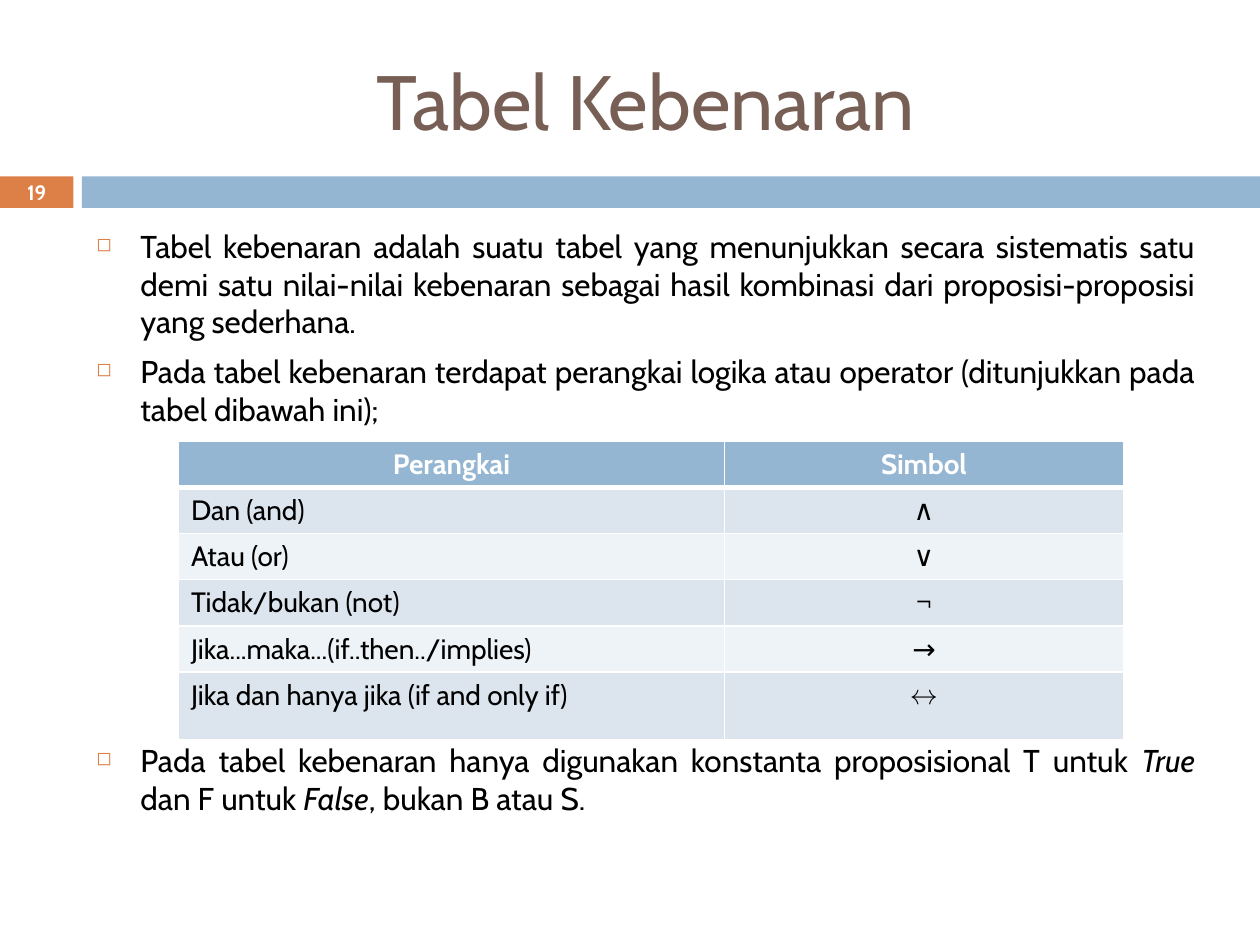
"""Builds the truth table slide with its connectives."""
from dataclasses import dataclass

from lxml.etree import SubElement
from pptx import Presentation
from pptx.dml.color import RGBColor
from pptx.enum.shapes import MSO_SHAPE as Preset
from pptx.enum.text import MSO_ANCHOR as Anchor, PP_ALIGN as Align
from pptx.oxml.ns import qn
from pptx.util import Inches, Pt


@dataclass(frozen=True)
class Theme:
    font: str = "Cabin"
    title: str = "775F55"
    ink: str = "000000"
    paper: str = "FFFFFF"
    accent: str = "DD8047"
    band: str = "94B6D2"
    stripes: tuple = ("DCE5EE", "EEF3F7")
    title_size: float = 44
    body_size: float = 18
    table_size: float = 16
    number_size: float = 11.9


def write(frame, paragraphs, *, font, size, color, bold=False, align=Align.LEFT,
          gaps=(), bullet=None):
    """Fill a text frame; each paragraph is a list of (text, italic) parts."""
    for index, parts in enumerate(paragraphs):
        line = frame.add_paragraph() if index else frame.paragraphs[0]
        line.alignment = align
        if gaps:
            line.space_before = Pt(gaps[index])
        if bullet:
            add_bullet(line, bullet)
        for words, italic in parts:
            run = line.add_run()
            run.text = words
            run.font.name, run.font.size = font, Pt(size)
            run.font.bold, run.font.italic = bold, italic
            run.font.color.rgb = RGBColor.from_string(color)


def add_bullet(line, color):
    """Give a paragraph a hanging square bullet."""
    props = line._p.get_or_add_pPr()
    props.set("marL", str(Inches(0.35)))
    props.set("indent", str(-Inches(0.35)))
    SubElement(SubElement(props, qn("a:buClr")), qn("a:srgbClr"), val=color)
    SubElement(props, qn("a:buSzPct"), val="60000")
    SubElement(props, qn("a:buChar"), char="◻")


def add_borders(cell, color, bottom):
    """Draw thin cell borders, with a bottom line of its own width."""
    props = cell._tc.get_or_add_tcPr()
    for side, width in zip("LRTB", (1, 1, 1, bottom)):
        border = SubElement(props, qn(f"a:ln{side}"), w=str(Pt(width)))
        fill = SubElement(border, qn("a:solidFill"))
        SubElement(fill, qn("a:srgbClr"), val=color)


def grid(units):
    """Convert grid units, twelve to the inch, to a length."""
    return Inches(units / 12)


class Deck:
    """Holds the theme and the current slide, on a grid of 120 by 90 units."""

    def __init__(self, theme):
        self.theme = theme
        self.show = Presentation()
        self.show.slide_width, self.show.slide_height = grid(120), grid(90)
        self.slide = self.show.slides.add_slide(self.show.slide_layouts[6])

    def bar(self, box, color):
        """Add a plain filled bar."""
        bar = self.slide.shapes.add_shape(Preset.RECTANGLE, *map(grid, box))
        bar.shadow.inherit = False
        bar.fill.solid()
        bar.fill.fore_color.rgb = RGBColor.from_string(color)
        bar.line.fill.background()

    def text(self, box, paragraphs, anchor=Anchor.MIDDLE, **style):
        """Add a wrapped text box."""
        frame = self.slide.shapes.add_textbox(*map(grid, box)).text_frame
        frame.word_wrap = True
        frame.vertical_anchor = anchor
        write(frame, paragraphs, font=self.theme.font, **style)

    def table(self, corner, columns, heights, rows):
        """Add a table with a header row and striped body rows."""
        theme = self.theme
        size = sum(columns), sum(heights)
        table = self.slide.shapes.add_table(
            len(rows), len(columns), *map(grid, (*corner, *size))).table
        table.horz_banding = False
        for column, width in zip(table.columns, columns):
            column.width = grid(width)
        for r, (row, height) in enumerate(zip(rows, heights)):
            table.rows[r].height = grid(height)
            header = r == 0
            shade = theme.band if header else theme.stripes[(r - 1) % 2]
            for c, words in enumerate(row):
                cell = table.cell(r, c)
                add_borders(cell, theme.paper, 3 if header else 1)
                cell.fill.solid()
                cell.fill.fore_color.rgb = RGBColor.from_string(shade)
                write(cell.text_frame, [[(words, False)]], font=theme.font,
                      size=theme.table_size, bold=header,
                      color=theme.paper if header else theme.ink,
                      align=Align.CENTER if header or c else Align.LEFT)


CONNECTIVES = [
    ("Perangkai", "Simbol"),
    ("Dan (and)", "∧"),
    ("Atau (or)", "∨"),
    ("Tidak/bukan (not)", "¬"),
    ("Jika...maka...(if..then../implies)", "→"),
    ("Jika dan hanya jika (if and only if)", "↔"),
]
EXPLANATION = [
    [("Tabel kebenaran adalah suatu tabel yang menunjukkan secara sistematis satu "
      "demi satu nilai-nilai kebenaran sebagai hasil kombinasi dari "
      "proposisi-proposisi yang sederhana.", False)],
    [("Pada tabel kebenaran terdapat perangkai logika atau operator (ditunjukkan "
      "pada tabel dibawah ini);", False)],
    [("Pada tabel kebenaran hanya digunakan konstanta proposisional T untuk ", False),
     ("True ", True), ("dan F untuk ", False), ("False", True),
     (", bukan B atau S.", False)],
]


def main():
    theme = Theme()
    deck = Deck(theme)
    number_box = (0, 16.8, 7, 3)
    deck.bar(number_box, theme.accent)
    deck.bar((7.8, 16.8, 112.2, 3), theme.band)
    deck.text((8, 3, 107, 13), [[("Tabel Kebenaran", False)]],
              size=theme.title_size, color=theme.title, align=Align.CENTER)
    deck.text(number_box, [[("19", False)]], size=theme.number_size,
              color=theme.paper, bold=True, align=Align.CENTER)
    deck.text((8, 21, 107, 69), EXPLANATION, anchor=Anchor.TOP,
              size=theme.body_size, color=theme.ink, align=Align.JUSTIFY,
              gaps=(7, 7, 179), bullet=theme.accent)
    deck.table((17, 42), (52, 38), [4.4] * 5 + [6.4], CONNECTIVES)
    deck.show.save("out.pptx")


if __name__ == "__main__":
    main()
